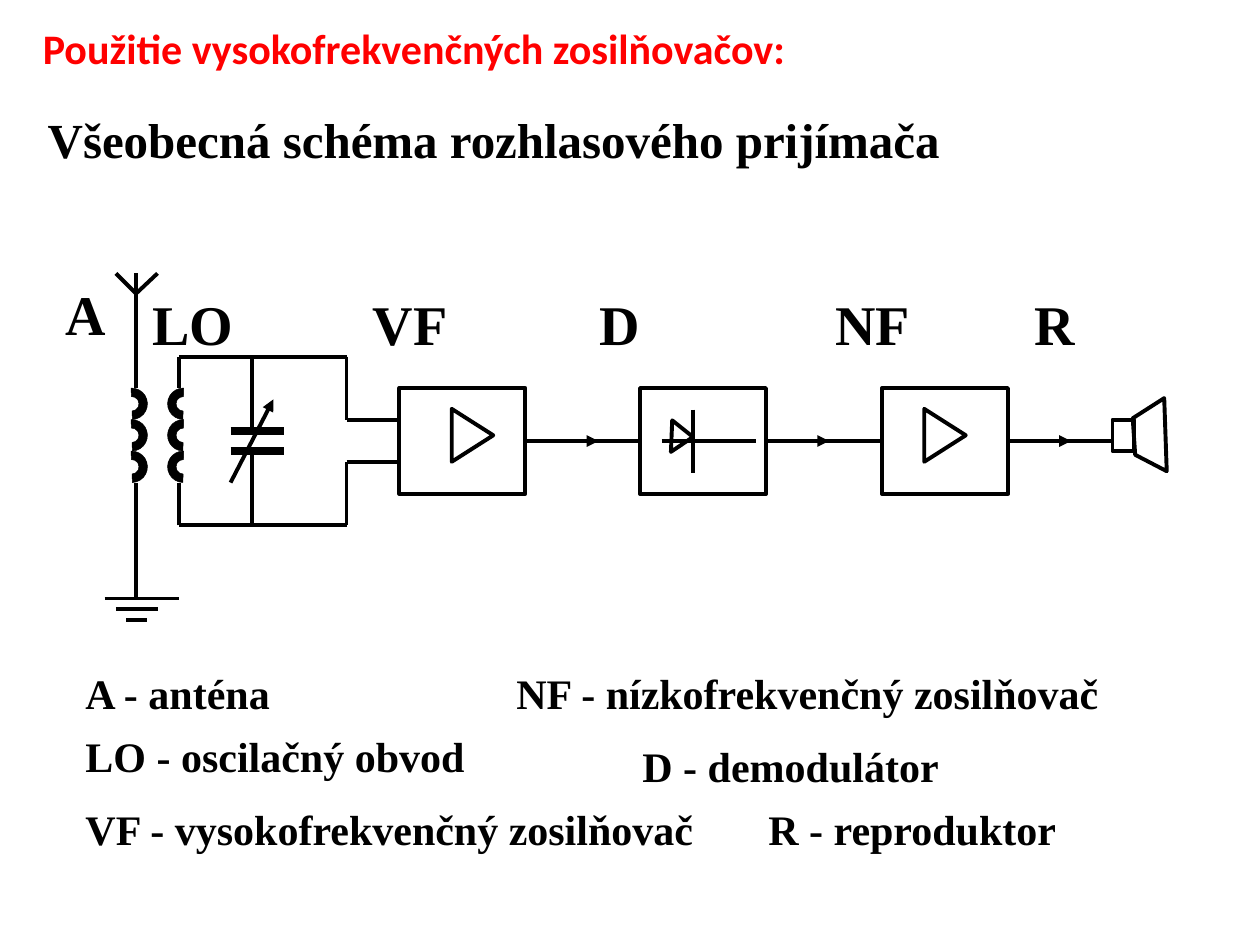
from dataclasses import dataclass

from lxml.etree import SubElement
from pptx import Presentation
from pptx.dml.color import RGBColor
from pptx.enum.shapes import MSO_CONNECTOR as Link, MSO_SHAPE as Preset
from pptx.enum.text import MSO_ANCHOR as Anchor, MSO_AUTO_SIZE as AutoSize, PP_ALIGN as Align
from pptx.oxml.ns import qn
from pptx.util import Inches, Pt


@dataclass(frozen=True)
class Theme:
    ink: RGBColor = RGBColor(0, 0, 0)
    accent: RGBColor = RGBColor(255, 0, 0)
    title_font: str = "Calibri"
    body_font: str = "Times New Roman"
    label_size: int = 32
    subtitle_size: int = 28
    body_size: int = 24
    wire: float = 2.25
    plate: float = 4.5
    hairline: float = 0.25


class Schematic:
    """Holds the theme and the current slide, and draws circuit parts on it."""

    def __init__(self, slide, theme):
        self.slide, self.shapes, self.theme = slide, slide.shapes, theme

    def set_text(self, box, text, size=None, font=None, color=None, wrap=True, tabs=(), inset=0.1):
        frame = box.text_frame
        frame.word_wrap = wrap
        frame.auto_size = AutoSize.SHAPE_TO_FIT_TEXT
        frame.vertical_anchor = Anchor.TOP
        frame.margin_left = Inches(inset)
        para = frame.paragraphs[0]
        para.alignment = Align.LEFT
        if tabs:
            stops = SubElement(para._p.get_or_add_pPr(), qn("a:tabLst"))
            for stop in tabs:
                SubElement(stops, qn("a:tab"), pos=str(Inches(stop)), algn="l")
        span = para.add_run()
        span.text = text
        span.font.name = font or self.theme.body_font
        span.font.size = Pt(size or self.theme.body_size)
        span.font.bold = True
        span.font.color.rgb = color or self.theme.ink

    def title(self, text, *place):
        box = self.shapes.title
        box.left, box.top, box.width, box.height = map(Inches, place)
        self.set_text(box, text, font=self.theme.title_font, color=self.theme.accent, wrap=False)

    def text(self, text, *place, **style):
        self.set_text(self.shapes.add_textbox(*map(Inches, place)), text, **style)

    def outline(self, shape):
        shape.shadow.inherit = False
        shape.fill.background()
        shape.line.color.rgb = self.theme.ink
        shape.line.width = Pt(self.theme.wire)
        return shape

    def shape(self, preset, *place, rotation=0):
        shape = self.outline(self.shapes.add_shape(preset, *map(Inches, place)))
        shape.rotation = rotation
        return shape

    def polygon(self, points):
        corners = [(Inches(x), Inches(y)) for x, y in points]
        builder = self.shapes.build_freeform(*corners[0])
        builder.add_line_segments(corners[1:], close=True)
        return self.outline(builder.convert_to_shape())

    def wire(self, x1, y1, x2, y2, width=None, arrow=False):
        line = self.shapes.add_connector(Link.STRAIGHT, *map(Inches, (x1, y1, x2, y2)))
        line.line.color.rgb = self.theme.ink
        line.line.width = Pt(width or self.theme.wire)
        if arrow:
            SubElement(line.line._get_or_add_ln(), qn("a:tailEnd"), type="triangle")
        SubElement(line._element.spPr, qn("a:effectLst"))
        return line

    def coil(self, left, rotation):
        for turn in range(3):
            arc = self.shape(Preset.BLOCK_ARC, left, 3.08 + turn * 0.25, 0.25, 0.25,
                             rotation=rotation)
            arc.adjustments[2] = 0.27
            arc.fill.solid()
            arc.fill.fore_color.rgb = self.theme.ink
            arc.line.width = Pt(self.theme.hairline)

    def antenna(self):
        self.wire(1.08, 2.17, 1.08, 3.08)
        for tip in (0.92, 1.25):
            self.wire(tip, 2.17, 1.08, 2.33)
        self.coil(0.92, 87.5)
        self.wire(1.08, 3.83, 1.08, 4.75)
        for left, right, y in ((0.83, 1.42, 4.75), (0.92, 1.25, 4.83), (1, 1.17, 4.92)):
            self.wire(left, y, right, y)

    def tuned_circuit(self):
        self.coil(1.33, 271.4)
        # Upper and lower halves: rail, coil end, capacitor plate, output
        for rail, coil_end, plate, output in ((2.83, 3.08, 3.42, 3.33), (4.17, 3.83, 3.58, 3.67)):
            self.wire(1.42, rail, 2.75, rail)
            self.wire(1.42, rail, 1.42, coil_end)
            self.wire(2, rail, 2, plate)
            self.wire(1.83, plate, 2.25, plate, width=self.theme.plate)
            self.wire(2.75, rail, 2.75, output)
            self.wire(2.75, output, 3.17, output)
        self.wire(1.83, 3.83, 2.17, 3.17, arrow=True)

    def stages(self):
        axis = 3.5
        lefts = (3.17, 5.08, 7)
        boxes = [self.shape(Preset.RECTANGLE, left, 3.08, 1, 0.84) for left in lefts]
        for left in (3.54, 7.29):
            self.shape(Preset.ISOSCELES_TRIANGLE, left, 3.29, 0.42, 0.33, rotation=90)
        self.shape(Preset.ISOSCELES_TRIANGLE, 5.29, 3.38, 0.25, 0.17, rotation=92.4)
        self.wire(5.25, axis, 6, axis)
        self.wire(5.5, 3.25, 5.5, 3.75)
        ends = (*lefts[1:], 8.83)
        for index, (box, left, end) in enumerate(zip(boxes, lefts, ends)):
            link = self.wire(left + 1, axis, end, axis)
            link.begin_connect(box, 3)
            if index + 1 < len(boxes):
                link.end_connect(boxes[index + 1], 1)
        for start in (4.5, 6.33, 8.25):
            self.wire(start, axis, start + 0.25, axis, arrow=True)

    def loudspeaker(self):
        self.shape(Preset.RECTANGLE, 8.83, 3.33, 0.17, 0.25)
        self.polygon([(9.24, 3.16), (8.99, 3.32), (9.01, 3.61), (9.26, 3.74)])


def main():
    deck = Presentation()
    deck.slide_width, deck.slide_height = Inches(10), Inches(7.5)
    theme = Theme()
    page = Schematic(deck.slides.add_slide(deck.slide_layouts[5]), theme)

    page.title("Použitie vysokofrekvenčných zosilňovačov:", 0.24, 0.13, 6.33, 0.5)
    page.text("Všeobecná schéma rozhlasového prijímača", 0.28, 0.82, 8.42, 0.57,
              size=theme.subtitle_size)
    page.antenna()
    page.tuned_circuit()
    page.stages()
    page.loudspeaker()
    page.text("A", 0.42, 2.17, 0.5, 0.63, size=theme.label_size)
    page.text("LO\tVF\tD\tNF\tR", 0.33, 2.25, 9.42, 0.63, size=theme.label_size,
              inset=0.88, tabs=(1.75, 3.55, 5.42, 7))

    legend = (
        ("A - anténa", 0.58, 5.25, 2.92),
        ("LO - oscilačný obvod", 0.58, 5.75, 4.25),
        ("VF - vysokofrekvenčný zosilňovač", 0.58, 6.33, 5.83),
        ("D - demodulátor", 5, 5.83, 3.92),
        ("NF - nízkofrekvenčný zosilňovač", 4, 5.25, 6),
        ("R - reproduktor", 6, 6.33, 4),
    )
    for entry, left, top, width in legend:
        page.text(entry, left, top, width, 0.5)
    deck.save("out.pptx")


if __name__ == "__main__":
    main()
